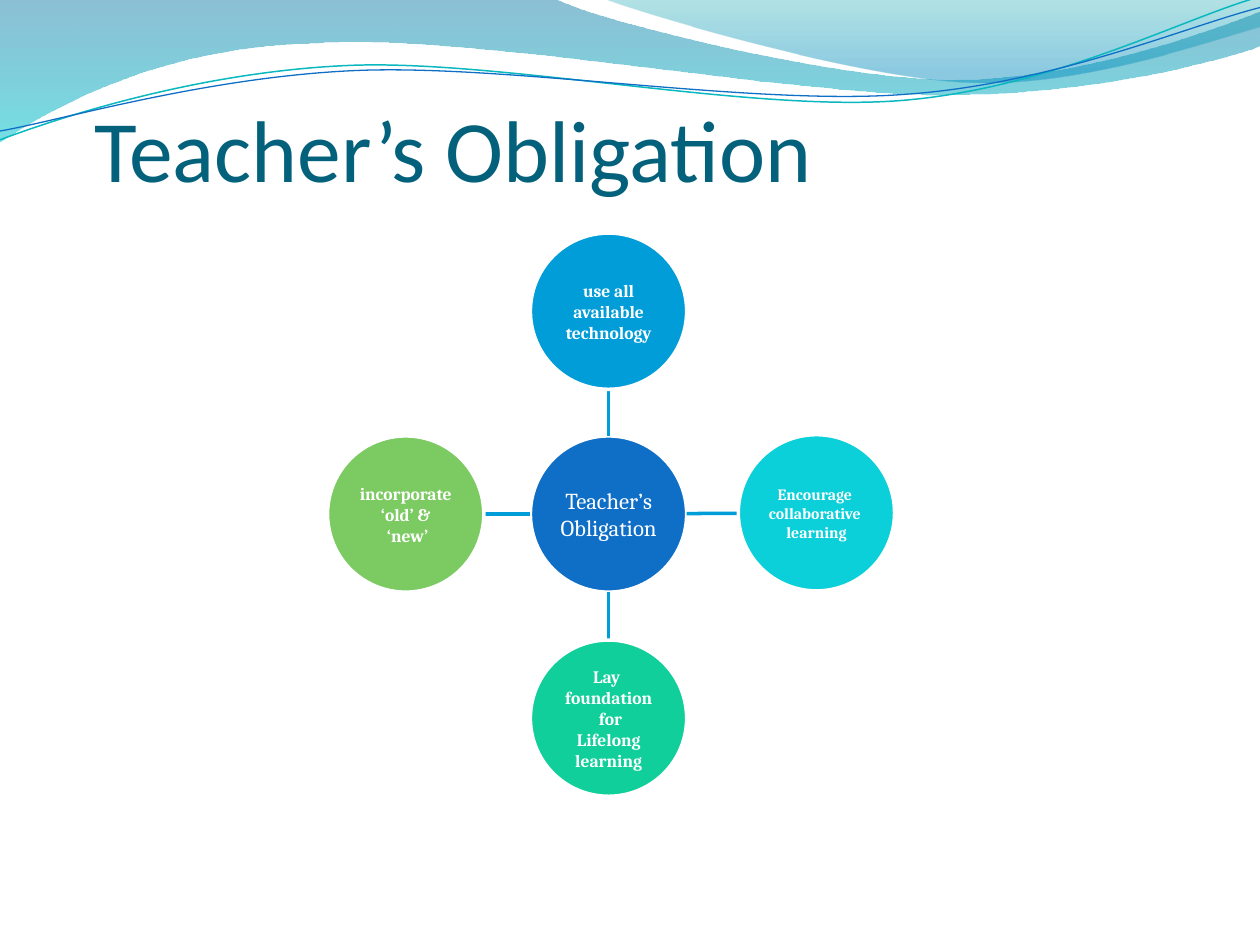
import math
from typing import NamedTuple

from lxml import etree
from pptx import Presentation
from pptx import util as u
from pptx.dml.color import RGBColor
from pptx.enum import shapes, text
from pptx.oxml.ns import qn

SIZE = 1.24
LABEL = 0.88
BLUE = "009DD9"
WHITE = "FFFFFF"


class Stop(NamedTuple):
    at: float
    color: str
    alpha: int


class Wave(NamedTuple):
    start: tuple
    curves: list
    stops: tuple = ()
    line: tuple = ()


class Node(NamedTuple):
    left: float
    top: float
    color: str
    lines: list
    size: int = 10
    bold: bool = True


WAVES = [
    Wave((0, 0),
         [(4.4, -0.01),
          (4.76, 0.17, 6.64, 0.63, 7.58, 0.63),
          (8.53, 0.63, 9.58, 0.26, 10, 0.09),
          (10.01, 0.36),
          (9.83, 0.44, 8.7, 0.76, 7.46, 0.75),
          (6.22, 0.75, 3.82, 0.28, 2.57, 0.34),
          (1.29, 0.36, 0.46, 0.83, -0.01, 1.13),
          (0, 0)],
         stops=(Stop(0, "0074A1", 45), Stop(1, "00C6CF", 55))),
    Wave((4.79, -0.01),
         [(5.09, 0.11, 6.82, 0.62, 7.69, 0.65),
          (8.56, 0.69, 9.61, 0.32, 10, 0.21),
          (10, 0),
          (4.79, -0.01)],
         stops=(Stop(0, "00A1A9", 30), Stop(0.8, "008BBF", 45))),
    Wave((0, 1.11),
         [(0.48, 0.93, 1.58, 0.57, 2.77, 0.52),
          (3.95, 0.47, 5.93, 0.89, 7.13, 0.8),
          (8.33, 0.71, 9.38, 0.15, 9.98, -0.02)],
         line=("0AB8BF", 0.85)),
    Wave((0, 1.04),
         [(0.47, 0.96, 1.64, 0.61, 2.83, 0.56),
          (4.03, 0.51, 5.97, 0.84, 7.17, 0.75),
          (8.36, 0.67, 9.41, 0.21, 10, 0.06)],
         line=("0F6FC6", 0.75)),
]

HUB = Node(4.21, 3.46, "0F6FC6", ["Teacher’s", "Obligation"], 13, False)
NODES = [
    Node(4.21, 1.85, BLUE, ["use all", "available", "technology"]),
    Node(5.86, 3.45, "0BD0D9", ["Encourage ", "collaborative ", "learning"], 9),
    Node(4.21, 5.08, "10CF9B",
         ["Lay ", "foundation", " for", "Lifelong", "learning"]),
    Node(2.6, 3.46, "7CCA62", ["incorporate", "‘old’ &", " ‘new’"]),
]


def paint(part, color: str) -> None:
    part.solid()
    part.fore_color.rgb = RGBColor.from_string(color)


def stroke(line, color: str, width: float) -> None:
    paint(line.fill, color)
    line.width = u.Pt(width)


def bend(shape, curves: list) -> None:
    legs = shape.element.spPr.iter(qn("a:lnTo"))
    for curve, leg in zip(curves, list(legs)):
        if len(curve) == 6:
            outline = leg.getparent()
            spot = outline.index(leg)
            arc = etree.Element(qn("a:cubicBezTo"))
            for old in outline[spot:spot + 3]:
                arc.append(old[0])
                outline.remove(old)
            outline.insert(spot, arc)


def shade(shape, stops: tuple) -> None:
    shape.fill.gradient()
    shape.fill.gradient_angle = 270
    for mark, stop in zip(shape.fill.gradient_stops, stops):
        mark.position = stop.at
        mark.color.rgb = RGBColor.from_string(stop.color)
    tones = shape.element.spPr.find(qn("a:gradFill")).iter(qn("a:srgbClr"))
    for tone, stop in zip(tones, stops):
        etree.SubElement(tone, qn("a:alpha"), val=str(stop.alpha * 1000))


def draw_wave(slide, wave: Wave) -> None:
    points = [(u.Inches(x), u.Inches(y)) for curve in wave.curves
              for x, y in zip(curve[::2], curve[1::2])]
    start = [u.Inches(side) for side in wave.start]
    pen = slide.shapes.build_freeform(*start, scale=1.0)
    pen.add_line_segments(points, close=bool(wave.stops))
    shape = pen.convert_to_shape()
    shape.shadow.inherit = False
    legs = [curve for curve in wave.curves
            for _ in range(len(curve) // 2)]
    spots = []
    for curve in wave.curves:
        spots += [curve] + [()] * (len(curve) // 2 - 1)
    bend(shape, spots if len(spots) == len(legs) else legs)
    if wave.stops:
        shade(shape, wave.stops)
        shape.line.fill.background()
    else:
        shape.fill.background()
        stroke(shape.line, *wave.line)


def add_box(slide, left: float, top: float, wide: float, high: float):
    box = slide.shapes.add_textbox(
        u.Inches(left), u.Inches(top), u.Inches(wide), u.Inches(high))
    box.text_frame.word_wrap = True
    return box.text_frame


def style(para, name: str, size: int, color: str) -> None:
    para.font.name = name
    para.font.size = u.Pt(size)
    para.font.color.rgb = RGBColor.from_string(color)


def draw_title(slide, words: str) -> None:
    frame = add_box(slide, 0.75, 0.67, 8.33, 0.92)
    frame.vertical_anchor = text.MSO_ANCHOR.BOTTOM
    frame.margin_left = frame.margin_right = frame.margin_bottom = 0
    frame.text = words
    style(frame.paragraphs[0], "Calibri", 50, "04617B")


def draw_link(slide, start: Node, end: Node) -> None:
    across, down = end.left - start.left, end.top - start.top
    span = math.hypot(across, down)
    ends = []
    for reach in (SIZE / 2, span - SIZE / 2):
        ends += [u.Inches(start.left + SIZE / 2 + across * reach / span),
                 u.Inches(start.top + SIZE / 2 + down * reach / span)]
    link = slide.shapes.add_connector(shapes.MSO_CONNECTOR.STRAIGHT, *ends)
    stroke(link.line, BLUE, 2)
    etree.SubElement(link.element.spPr, qn("a:effectLst"))


def draw_node(slide, node: Node) -> None:
    disc = slide.shapes.add_shape(
        shapes.MSO_SHAPE.OVAL, u.Inches(node.left), u.Inches(node.top),
        u.Inches(SIZE), u.Inches(SIZE))
    disc.shadow.inherit = False
    paint(disc.fill, node.color)
    stroke(disc.line, WHITE, 2)
    inset = (SIZE - LABEL) / 2
    frame = add_box(slide, node.left + inset, node.top + inset, LABEL, LABEL)
    frame.vertical_anchor = text.MSO_ANCHOR.MIDDLE
    frame.margin_left = frame.margin_right = u.Inches(0.01)
    frame.margin_top = frame.margin_bottom = u.Inches(0.01)
    frame.text = "\n".join(node.lines)
    for para in frame.paragraphs:
        para.alignment = text.PP_ALIGN.CENTER
        para.font.bold = node.bold
        style(para, "Cambria", node.size, WHITE)


def main() -> None:
    deck = Presentation()
    deck.slide_width, deck.slide_height = u.Inches(10), u.Inches(7.5)
    slide = deck.slides.add_slide(deck.slide_layouts[6])
    for wave in WAVES:
        draw_wave(slide, wave)
    draw_title(slide, "Teacher’s Obligation")
    draw_node(slide, HUB)
    for node in NODES:
        draw_link(slide, HUB, node)
        draw_node(slide, node)
    deck.save("out.pptx")


if __name__ == "__main__":
    main()
